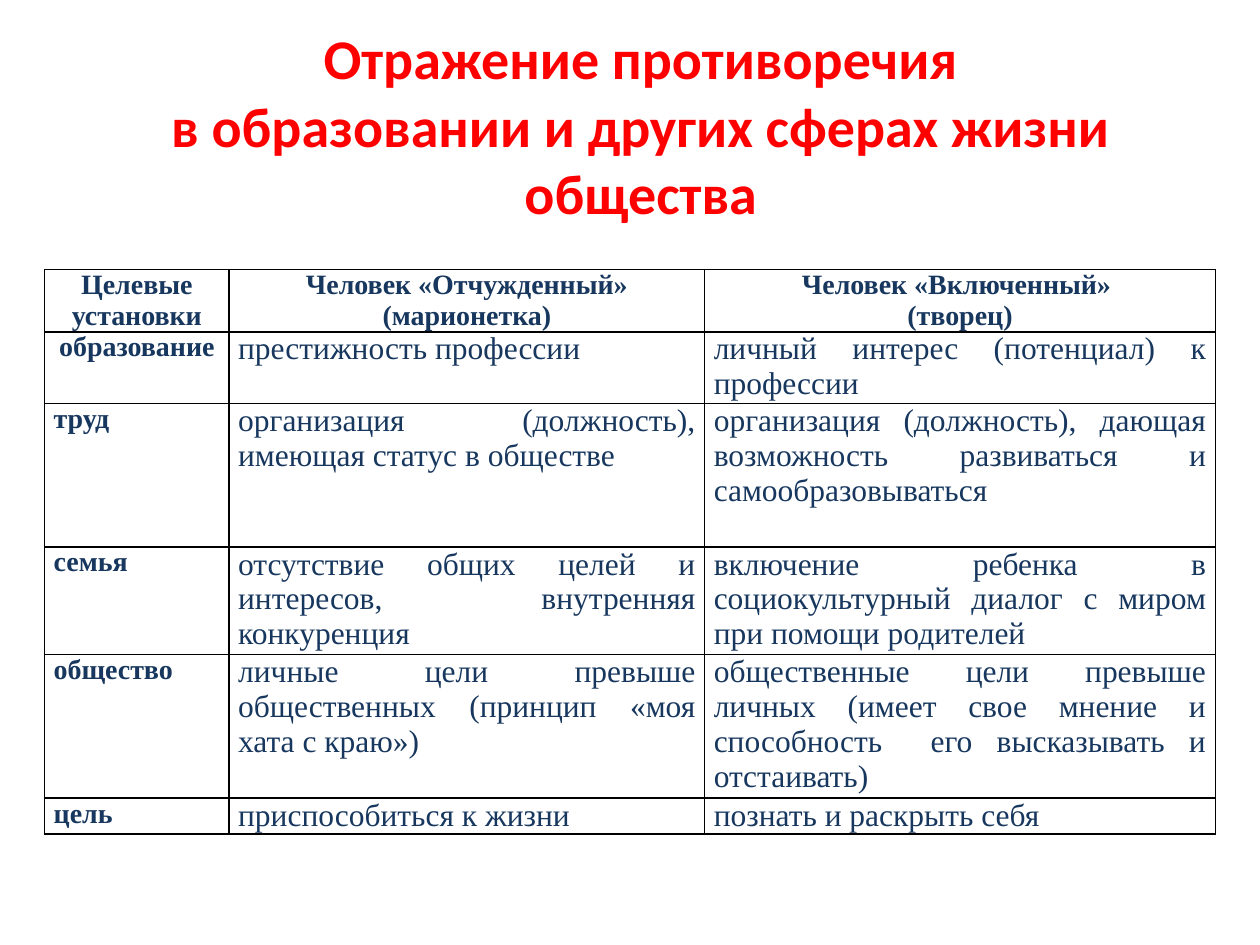
from lxml.etree import SubElement
from pptx import Presentation
from pptx.dml.color import RGBColor
from pptx.enum.text import MSO_ANCHOR, PP_ALIGN
from pptx.oxml.ns import qn
from pptx.util import Pt

COLORS = {"title": "FF0000", "text": "17375E", "border": "000000", "cell": "FFFFFF"}


def format_text(p, font, size, color, bold, align):
    p.alignment = align
    for r in p.runs:
        r.font.name = font
        r.font.size = Pt(size)
        r.font.bold = bold
        r.font.color.rgb = RGBColor.from_string(COLORS[color])


def add_borders(cell):
    tc_pr = cell._tc.get_or_add_tcPr()
    for i, side in enumerate(("lnL", "lnR", "lnT", "lnB")):
        ln = SubElement(tc_pr, qn(f"a:{side}"), w=str(Pt(1)))
        fill = SubElement(ln, qn("a:solidFill"))
        SubElement(fill, qn("a:srgbClr"), val=COLORS["border"])
        tc_pr.insert(i, ln)  # borders come before the cell fill


prs = Presentation()
prs.slide_width, prs.slide_height = Pt(720), Pt(540)
s = prs.slides.add_slide(prs.slide_layouts[5])

# Title
title = s.shapes.title
title.left, title.top, title.width, title.height = Pt(36.7), Pt(26), Pt(659), Pt(90.5)
tf = title.text_frame
tf.text = "Отражение противоречия\vв образовании и других сферах жизни общества"
tf.word_wrap = True
tf.vertical_anchor = MSO_ANCHOR.MIDDLE
format_text(tf.paragraphs[0], "Calibri", 32, "title", True, PP_ALIGN.CENTER)

# Table of attitudes
rows = [
    ("Целевые установки", "Человек «Отчужденный» (марионетка)",
     "Человек «Включенный» \n(творец)"),
    ("образование", "престижность профессии", "личный интерес (потенциал) к профессии"),
    ("труд", "организация (должность), имеющая статус в обществе",
     "организация (должность), дающая возможность развиваться и самообразовываться"),
    ("семья", "отсутствие общих целей и интересов, внутренняя конкуренция",
     "включение ребенка в социокультурный диалог с миром при помощи родителей"),
    ("общество", "личные цели превыше общественных (принцип «моя хата с краю»)",
     "общественные цели превыше личных (имеет свое мнение и способность  его "
     "высказывать и отстаивать)"),
    ("цель", "приспособиться к жизни", "познать и раскрыть себя"),
]
col_widths = [105.4, 271.8, 291.8]
row_heights = [33.4, 41, 82, 61.5, 82, 20.5]

table = s.shapes.add_table(len(rows), len(col_widths), Pt(25.5), Pt(154),
                           Pt(sum(col_widths)), Pt(sum(row_heights))).table
for col, width in zip(table.columns, col_widths):
    col.width = Pt(width)
for row, height in zip(table.rows, row_heights):
    row.height = Pt(height)

for i, texts in enumerate(rows):
    for j, text in enumerate(texts):
        cell = table.cell(i, j)
        cell.text_frame.text = text
        cell.margin_left = cell.margin_right = Pt(5.2)
        cell.margin_top = cell.margin_bottom = 0
        cell.fill.solid()
        cell.fill.fore_color.rgb = RGBColor.from_string(COLORS["cell"])
        add_borders(cell)

        heading = i == 0 or j == 0
        if i == 0 or (i, j) == (1, 0):
            align = PP_ALIGN.CENTER
        elif (i, j) == (1, 1):
            align = PP_ALIGN.LEFT
        else:
            align = PP_ALIGN.JUSTIFY
        for p in cell.text_frame.paragraphs:
            format_text(p, "Times New Roman", 16 if heading else 18, "text", heading, align)

prs.save("out.pptx")
